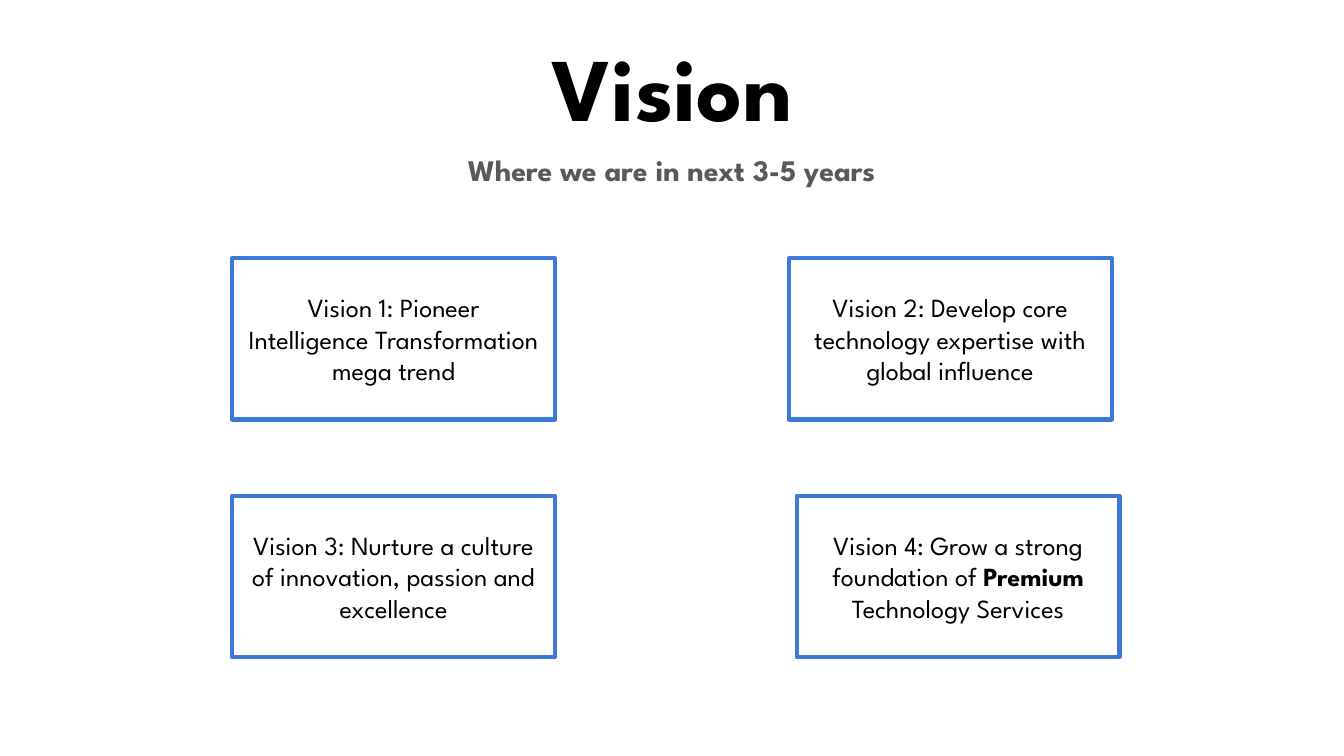
from typing import NamedTuple

from pptx import Presentation
from pptx.dml.color import RGBColor
from pptx.enum.shapes import MSO_SHAPE as Preset
from pptx.enum.text import MSO_ANCHOR as Anchor, MSO_AUTO_SIZE as AutoSize, PP_ALIGN as Align
from pptx.util import Cm, Pt

COLORS = {"ink": "000000", "muted": "595959", "paper": "FFFFFF", "border": "3C78D8"}
FONT = "League Spartan"
INSET = 0.25
CARD_WIDTH, CARD_HEIGHT = 6.1, 3.05
LEFT_COLUMN = 4.39
TOP_ROW, BOTTOM_ROW = 4.88, 9.37


class Area(NamedTuple):
    left: float
    top: float
    width: float
    height: float


class Style(NamedTuple):
    size: int
    color: str
    bold: bool | None = None
    anchor: Anchor = Anchor.TOP


class Card(NamedTuple):
    left: float
    top: float
    text: str
    emphasis: str = ""


TITLE = Style(48, "ink", True)
SUBTITLE = Style(16, "muted", True)
CARD = Style(14, "ink", anchor=Anchor.MIDDLE)

CARDS = [
    Card(LEFT_COLUMN, TOP_ROW, "Vision 1: Pioneer Intelligence Transformation mega trend"),
    Card(14.91, TOP_ROW, "Vision 2: Develop core technology expertise with global influence"),
    Card(LEFT_COLUMN, BOTTOM_ROW,
         "Vision 3: Nurture a culture of innovation, passion and excellence"),
    Card(15.06, BOTTOM_ROW,
         "Vision 4: Grow a strong foundation of Premium Technology Services", "Premium"),
]


def color(name: str) -> RGBColor:
    return RGBColor.from_string(COLORS[name])


def write(shape, text: str, style: Style, emphasis: str = ""):
    frame = shape.text_frame
    frame.word_wrap = True
    frame.auto_size = AutoSize.NONE
    frame.vertical_anchor = style.anchor
    frame.margin_left = frame.margin_right = Cm(INSET)
    frame.margin_top = frame.margin_bottom = Cm(INSET)
    para = frame.paragraphs[0]
    para.alignment = Align.CENTER
    para.font.name = FONT
    para.font.size = Pt(style.size)
    para.font.bold = style.bold
    para.font.color.rgb = color(style.color)
    for part in text.partition(emphasis) if emphasis else [text]:
        span = para.add_run()
        span.text = part
        if part == emphasis:
            span.font.bold = True
    return para


def draw_title(page, text: str, area: Area) -> None:
    title = page.shapes.title
    title.left, title.top, title.width, title.height = map(Cm, area)
    write(title, text, TITLE).line_spacing = 1.0


def draw_subtitle(page, text: str, area: Area) -> None:
    box = page.shapes.add_textbox(*map(Cm, area))
    para = write(box, text, SUBTITLE)
    para.line_spacing = 1.15
    para.space_after = Pt(12)


def draw_card(page, card: Card) -> None:
    area = Area(card.left, card.top, CARD_WIDTH, CARD_HEIGHT)
    box = page.shapes.add_shape(Preset.RECTANGLE, *map(Cm, area))
    box.shadow.inherit = False
    box.fill.solid()
    box.fill.fore_color.rgb = color("paper")
    box.line.color.rgb = color("border")
    box.line.width = Pt(2.25)
    write(box, card.text, CARD, card.emphasis)


def main() -> None:
    deck = Presentation()
    deck.slide_width, deck.slide_height = Cm(25.4), Cm(14.29)
    page = deck.slides.add_slide(deck.slide_layouts.get_by_name("Title Only"))
    draw_title(page, "Vision", Area(8.71, 0.36, 7.98, 2.57))
    draw_subtitle(page, "Where we are in next 3-5 years", Area(0.86, 2.51, 23.67, 1.35))
    for card in CARDS:
        draw_card(page, card)
    deck.save("out.pptx")


if __name__ == "__main__":
    main()
